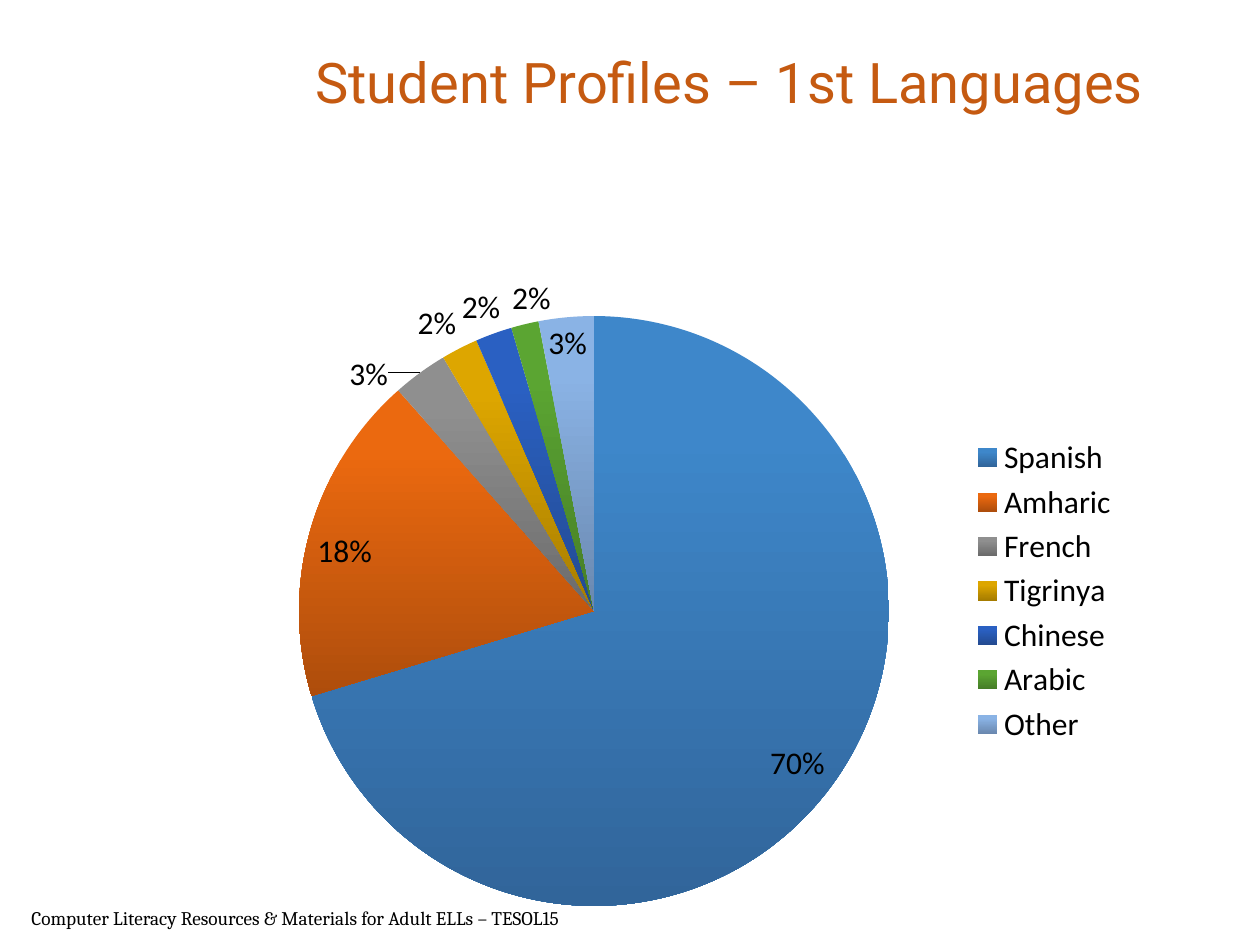
from dataclasses import dataclass

from lxml import etree
from pptx import Presentation
from pptx import util as u
from pptx.chart import data as chart_data
from pptx.dml.color import RGBColor
from pptx.enum import chart as charts, text
from pptx.oxml.ns import qn

INSIDE = charts.XL_LABEL_POSITION.INSIDE_END
OUTSIDE = charts.XL_LABEL_POSITION.OUTSIDE_END


@dataclass
class Language:
    name: str
    share: float
    light: str
    dark: str
    label_position: charts.XL_LABEL_POSITION
    label_shift: tuple[float, float] = (0, 0)


@dataclass
class Caption:
    wording: str
    box: tuple[float, float, float, float]
    color: str
    font: dict
    frame: dict
    alignment: text.PP_ALIGN


LANGUAGES = [
    Language("Spanish", 0.7, "3E87CA", "31659A", INSIDE),
    Language("Amharic", 0.18, "EB690F", "AE4D0C", INSIDE),
    Language("French", 0.03, "8F8F8F", "6B6B6B", OUTSIDE, (-0.03, 0.04)),
    Language("Tigrinya", 0.02, "DDA600", "A67C00", OUTSIDE),
    Language("Chinese", 0.02, "2A60C2", "234A90", OUTSIDE, (0.01, 0)),
    Language("Arabic", 0.015, "5BA532", "467D27", OUTSIDE, (0.03, 0)),
    Language("Other", 0.03, "8AB3E5", "6A88AF", INSIDE, (-0.02, 0)),
]

CAPTIONS = [
    Caption(
        "Student Profiles – 1st Languages",
        (2.08, 0.02, 7.42, 1.25),
        "C55A11",
        {"name": "Roboto", "size": u.Pt(32)},
        {"word_wrap": True, "vertical_anchor": text.MSO_ANCHOR.MIDDLE},
        text.PP_ALIGN.CENTER,
    ),
    Caption(
        "Computer Literacy Resources & Materials for Adult ELLs – TESOL15",
        (0.15, 7.14, 4.7, 0.35),
        "000000",
        {"name": "Cambria", "size": u.Pt(11)},
        {"word_wrap": True, "vertical_anchor": text.MSO_ANCHOR.TOP},
        text.PP_ALIGN.LEFT,
    ),
]


def set_color(target, hex_color: str) -> None:
    target.rgb = RGBColor.from_string(hex_color)


def apply_format(target, values: dict) -> None:
    for attribute, value in values.items():
        setattr(target, attribute, value)


def add_caption(slide, caption: Caption) -> None:
    frame = slide.shapes.add_textbox(*map(u.Inches, caption.box)).text_frame
    apply_format(frame, caption.frame)
    paragraph = frame.paragraphs[0]
    paragraph.alignment = caption.alignment
    run = paragraph.add_run()
    run.text = caption.wording
    apply_format(run.font, caption.font)
    set_color(run.font.color, caption.color)


def manual_layout(values: dict):
    layout = etree.Element(qn("c:layout"))
    manual = etree.SubElement(layout, qn("c:manualLayout"))
    for tag, value in values.items():
        etree.SubElement(manual, qn(f"c:{tag}")).set("val", str(value))
    return layout


def style_slice(point, language: Language) -> None:
    fill = point.format.fill
    fill.gradient()
    fill.gradient_angle = 270
    stops = zip(fill.gradient_stops, (0.2, 1), (language.light, language.dark))
    for stop, position, color in stops:
        stop.position = position
        set_color(stop.color, color)
    point.format.line.fill.background()
    point.data_label.position = language.label_position


def add_language_pie(slide, languages: list[Language]) -> None:
    shares = chart_data.CategoryChartData(number_format="0%")
    shares.categories = [language.name for language in languages]
    shares.add_series("Series 1", [language.share for language in languages])
    box = map(u.Inches, (1.69, 2.03, 7.29, 5.32))
    pie = slide.shapes.add_chart(charts.XL_CHART_TYPE.PIE, *box, shares).chart
    apply_format(pie, {"has_title": False, "has_legend": True})
    apply_format(pie.font, {"name": "Calibri", "size": u.Pt(18)})
    set_color(pie.font.color, "000000")
    legend_format = {
        "position": charts.XL_LEGEND_POSITION.RIGHT,
        "include_in_layout": False,
    }
    apply_format(pie.legend, legend_format)

    plot = pie.plots[0]
    plot.vary_by_categories = True
    series = plot.series[0]
    labels = series.data_labels
    label_format = {
        "show_value": True,
        "number_format": "0%",
        "number_format_is_linked": False,
    }
    apply_format(labels, label_format)
    for index, language in enumerate(languages):
        style_slice(series.points[index], language)

    slice_labels = labels._element.findall(qn("c:dLbl"))
    for slice_label, language in zip(slice_labels, languages):
        if any(language.label_shift):
            shift = dict(zip("xy", language.label_shift))
            slice_label[0].addnext(manual_layout(shift))

    plot_area = pie._chartSpace.find(f".//{qn('c:plotArea')}")
    for old_layout in plot_area.findall(qn("c:layout")):
        plot_area.remove(old_layout)
    plot_layout = {
        "layoutTarget": "inner",
        "xMode": "edge",
        "yMode": "edge",
        "x": 0.09,
        "y": 0.09,
        "w": 0.65,
        "h": 0.88,
    }
    plot_area.insert(0, manual_layout(plot_layout))


def main() -> None:
    deck = Presentation()
    apply_format(deck, {"slide_width": u.Inches(10), "slide_height": u.Inches(7.5)})
    slide = deck.slides.add_slide(deck.slide_layouts[6])
    for caption in CAPTIONS:
        add_caption(slide, caption)
    add_language_pie(slide, LANGUAGES)
    deck.save("out.pptx")


if __name__ == "__main__":
    main()
